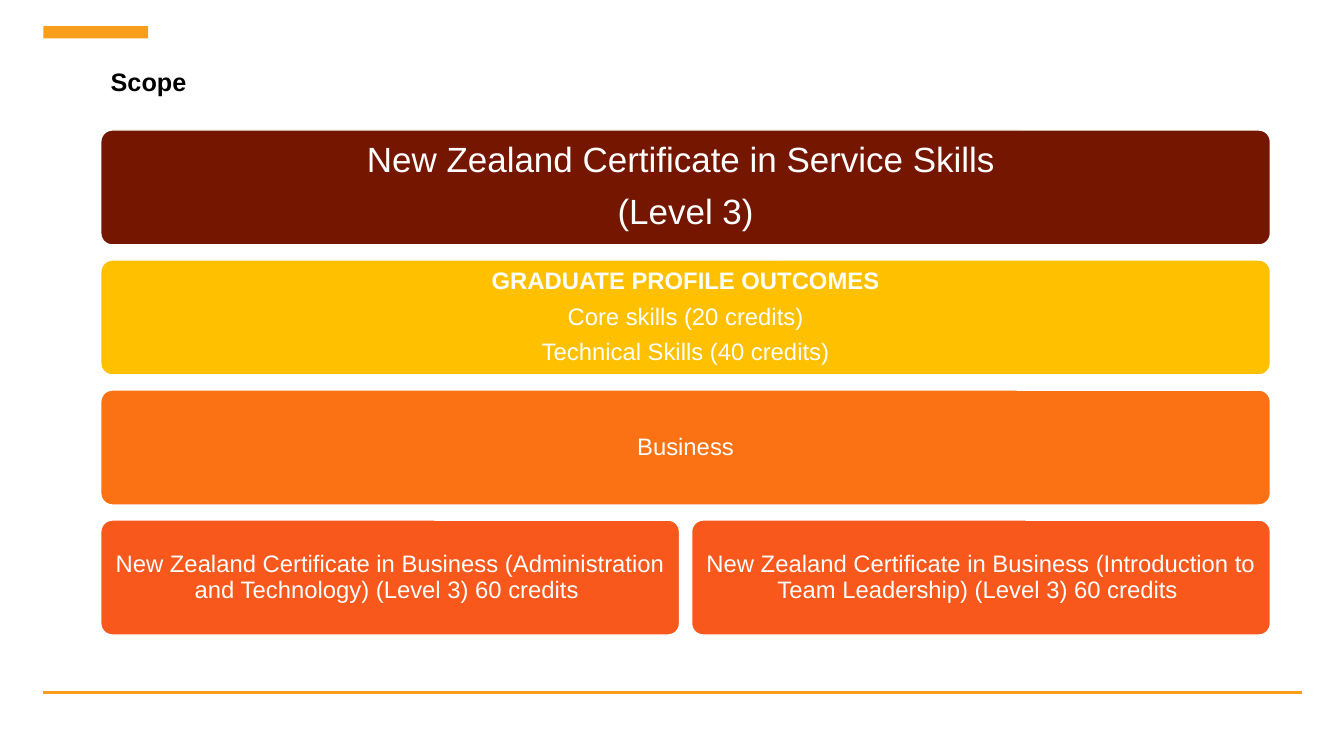
from lxml.etree import SubElement
from pptx import Presentation
from pptx.dml.color import RGBColor
from pptx.enum.shapes import MSO_CONNECTOR, MSO_SHAPE
from pptx.enum.text import MSO_ANCHOR, PP_ALIGN
from pptx.oxml.ns import qn
from pptx.util import Inches, Pt

WHITE = RGBColor(0xFF, 0xFF, 0xFF)
BLACK = RGBColor(0x00, 0x00, 0x00)
AMBER = RGBColor(0xF9, 0x9D, 0x1C)
MAROON = RGBColor(0x74, 0x16, 0x00)
YELLOW = RGBColor(0xFF, 0xC0, 0x00)
ORANGE = RGBColor(0xFA, 0x72, 0x13)
RED_ORANGE = RGBColor(0xF9, 0x58, 0x1D)

# Content: each level has a fill, text size, inset and boxes of (text, bold) lines
HEADING = "Scope"
LEVELS = [
    (MAROON, 25, 0.1, [
        [("New Zealand Certificate in Service Skills ", False), ("(Level 3)", False)],
    ]),
    (YELLOW, 17, 0.07, [
        [("GRADUATE PROFILE OUTCOMES", True),
         ("Core skills (20 credits)", False),
         ("Technical Skills (40 credits)", False)],
    ]),
    (ORANGE, 17, 0.07, [[("Business", False)]]),
    (RED_ORANGE, 17, 0.07, [
        [("New Zealand Certificate in Business (Administration and Technology) "
          "(Level 3) 60 credits ", False)],
        [("New Zealand Certificate in Business (Introduction to Team Leadership) "
          "(Level 3) 60 credits ", False)],
    ]),
]

# Layout in inches
LEFT, TOP, WIDTH = 1.0, 1.29, 11.6
BOX_HEIGHT, ROW_PITCH, COLUMN_GAP = 1.14, 1.29, 0.12


def write_lines(tf, lines, size, color, align=PP_ALIGN.LEFT, spacing=1.0, after=0):
    tf.word_wrap = True
    for i, (text, bold) in enumerate(lines):
        p = tf.paragraphs[0] if i == 0 else tf.add_paragraph()
        p.alignment = align
        p.line_spacing = spacing
        p.space_after = Pt(after)
        r = p.add_run()
        r.text = text
        r.font.name = "Arial"
        r.font.size = Pt(size)
        r.font.bold = bold
        r.font.color.rgb = color


def add_box(shapes, kind, left, top, width, height, fill):
    sp = shapes.add_shape(kind, Inches(left), Inches(top), Inches(width), Inches(height))
    sp.shadow.inherit = False
    sp.fill.solid()
    sp.fill.fore_color.rgb = fill
    sp.line.fill.background()
    return sp


def add_level_box(shapes, left, top, width, fill, size, inset, lines):
    sp = add_box(shapes, MSO_SHAPE.ROUNDED_RECTANGLE, left, top, width, BOX_HEIGHT, fill)
    sp.adjustments[0] = 0.1
    sp.line.color.rgb = WHITE
    sp.line.width = Pt(1)
    tf = sp.text_frame
    tf.vertical_anchor = MSO_ANCHOR.MIDDLE
    tf.margin_left = tf.margin_right = tf.margin_top = tf.margin_bottom = Inches(inset)
    write_lines(tf, lines, size, WHITE, PP_ALIGN.CENTER, spacing=0.9, after=size * 0.4)


def main():
    prs = Presentation()
    prs.slide_width, prs.slide_height = Inches(13.33), Inches(7.5)
    shapes = prs.slides.add_slide(prs.slide_layouts[6]).shapes

    # Accent bar and footer rule
    add_box(shapes, MSO_SHAPE.RECTANGLE, 0.43, 0.26, 1.04, 0.12, AMBER)
    rule = shapes.add_connector(
        MSO_CONNECTOR.STRAIGHT, Inches(0.43), Inches(6.87), Inches(12.91), Inches(6.87))
    rule.line.color.rgb = AMBER
    rule.line.width = Pt(2.25)
    SubElement(rule._element.spPr, qn("a:effectLst"))

    # Qualification levels, columns sharing the full width
    for row, (fill, size, inset, boxes) in enumerate(LEVELS):
        width = (WIDTH - COLUMN_GAP * (len(boxes) - 1)) / len(boxes)
        for column, lines in enumerate(boxes):
            add_level_box(shapes, LEFT + column * (width + COLUMN_GAP),
                          TOP + row * ROW_PITCH, width, fill, size, inset, lines)

    # Heading
    heading = shapes.add_textbox(Inches(LEFT), Inches(0.61), Inches(6.67), Inches(0.4))
    write_lines(heading.text_frame, [(HEADING, True)], 18, BLACK)

    prs.save("out.pptx")


if __name__ == "__main__":
    main()
